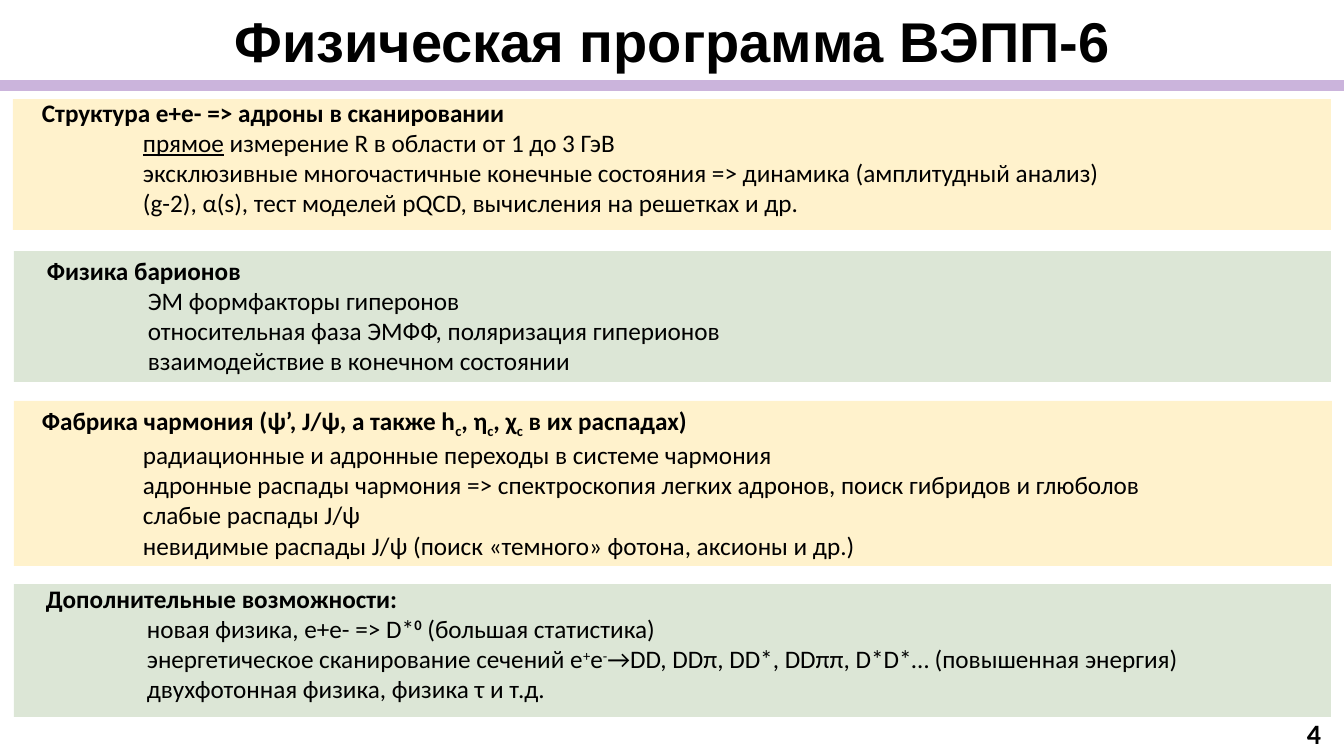
from lxml import etree
from pptx import Presentation
from pptx.dml.color import RGBColor
from pptx.enum.shapes import MSO_SHAPE
from pptx.enum.text import MSO_ANCHOR, MSO_AUTO_SIZE, PP_ALIGN
from pptx.oxml.ns import qn
from pptx.util import Pt

RECTANGLE = MSO_SHAPE.RECTANGLE
TOP, MIDDLE, BOTTOM = MSO_ANCHOR.TOP, MSO_ANCHOR.MIDDLE, MSO_ANCHOR.BOTTOM
LEFT, CENTER, RIGHT = PP_ALIGN.LEFT, PP_ALIGN.CENTER, PP_ALIGN.RIGHT
JUSTIFY = PP_ALIGN.JUSTIFY
GROW = MSO_AUTO_SIZE.SHAPE_TO_FIT_TEXT

BLACK = RGBColor(0x00, 0x00, 0x00)
AMBER = RGBColor(0xFF, 0xC0, 0x00)
GREEN = RGBColor(0x54, 0x82, 0x35)
PURPLE = RGBColor(0x70, 0x30, 0xA0)

PX = 914400 / 100.8
SLIDE_W, SLIDE_H = 1344, 756
ITEM_INDENT = 101
SUB, SUP = -25, 30

TITLE = "Физическая программа ВЭПП-6"
PAGE_NUMBER = "4"

SECTIONS = [
    {
        "color": AMBER, "band": (13, 99, 1318, 131), "text": (32, 92, 1089, 132), "align": LEFT,
        "heading": ["Структура е+е- => адроны в сканировании"],
        "items": [
            [("прямое", {"underline": True}), " измерение R в области от 1 до 3 ГэВ"],
            ["эксклюзивные многочастичные конечные состояния => динамика (амплитудный анализ)"],
            ["(g-2), α(s), тест моделей pQCD, вычисления на решетках и др."],
        ],
    },
    {
        "color": GREEN, "band": (14, 251, 1317, 131), "text": (37, 250, 1273, 132), "align": LEFT,
        "heading": ["Физика барионов"],
        "items": [
            ["ЭМ формфакторы гиперонов"],
            ["относительная фаза ЭМФФ, поляризация гиперионов"],
            ["взаимодействие в конечном состоянии"],
        ],
    },
    {
        "color": AMBER, "band": (14, 401, 1318, 165), "text": (32, 400, 1289, 163), "align": LEFT,
        "heading": [
            "Фабрика чармония (ψ’, J/ψ, а также h", ("c", {"baseline": SUB}),
            ", η", ("c", {"baseline": SUB}),
            ", χ", ("c", {"baseline": SUB}), " в их распадах)",
        ],
        "items": [
            ["радиационные и адронные переходы в системе чармония"],
            ["адронные распады чармония => спектроскопия легких адронов, поиск гибридов и глюболов"],
            ["слабые распады J/ψ"],
            ["невидимые распады J/ψ (поиск «темного» фотона, аксионы и др.)"],
        ],
    },
    {
        "color": GREEN, "band": (14, 584, 1317, 133), "text": (36, 578, 1292, 132), "align": JUSTIFY,
        "heading": ["Дополнительные возможности:"],
        "items": [
            ["новая физика, e+e- => D*", ("0", {"bold": True, "baseline": SUP}),
             " (большая статистика)"],
            ["энергетическое сканирование сечений e", ("+", {"baseline": SUP}),
             "e", ("-", {"baseline": SUP}),
             "→DD, DDπ, DD*, DDππ, D*D*… (повышенная энергия)"],
            ["двухфотонная физика, физика τ и т.д."],
        ],
    },
]


def px(value):
    return round(value * PX)


def add_band(slide, box, color, opacity):
    band = slide.shapes.add_shape(RECTANGLE, *map(px, box))
    band.shadow.inherit = False
    band.line.fill.background()
    band.fill.solid()
    band.fill.fore_color.rgb = color
    fill_color = band.fill._xPr.find(qn("a:solidFill"))[0]
    etree.SubElement(fill_color, qn("a:alpha")).set("val", str(opacity * 1000))


def add_frame(slide, box, anchor):
    frame = slide.shapes.add_textbox(*map(px, box)).text_frame
    frame.word_wrap = True
    frame.vertical_anchor = anchor
    return frame


def add_runs(paragraph, pieces, size, bold, font="Calibri"):
    for piece in pieces:
        text, style = (piece, {}) if isinstance(piece, str) else piece
        run = paragraph.add_run()
        run.text = text
        run.font.name = font
        run.font.size = Pt(size)
        run.font.color.rgb = BLACK
        run.font.bold = style.get("bold", bold)
        if "underline" in style:
            run.font.underline = True
        if "baseline" in style:
            run._r.get_or_add_rPr().set("baseline", str(style["baseline"] * 1000))


def add_section_text(slide, section):
    frame = add_frame(slide, section["text"], TOP)
    frame.auto_size = GROW
    add_runs(frame.paragraphs[0], section["heading"], 18, True)
    for item in section["items"]:
        paragraph = frame.add_paragraph()
        paragraph.alignment = section["align"]
        indent = paragraph._p.get_or_add_pPr()
        indent.set("marL", str(px(ITEM_INDENT)))
        indent.set("indent", "0")
        add_runs(paragraph, item, 18, False)


def main():
    deck = Presentation()
    deck.slide_width, deck.slide_height = px(SLIDE_W), px(SLIDE_H)
    slide = deck.slides.add_slide(deck.slide_layouts[6])

    for section in SECTIONS:
        add_band(slide, section["band"], section["color"], 20)

    title = add_frame(slide, (0, 0, SLIDE_W, 80), BOTTOM).paragraphs[0]
    title.alignment = CENTER
    title.line_spacing = 0.9
    add_runs(title, [TITLE], 40, True, "Arial")
    add_band(slide, (0, 80, SLIDE_W, 11), PURPLE, 36)

    page = add_frame(slide, (1029, 713, 302, 40), MIDDLE).paragraphs[0]
    page.alignment = RIGHT
    add_runs(page, [PAGE_NUMBER], 20, True)

    for section in SECTIONS:
        add_section_text(slide, section)

    deck.save("out.pptx")


if __name__ == "__main__":
    main()
